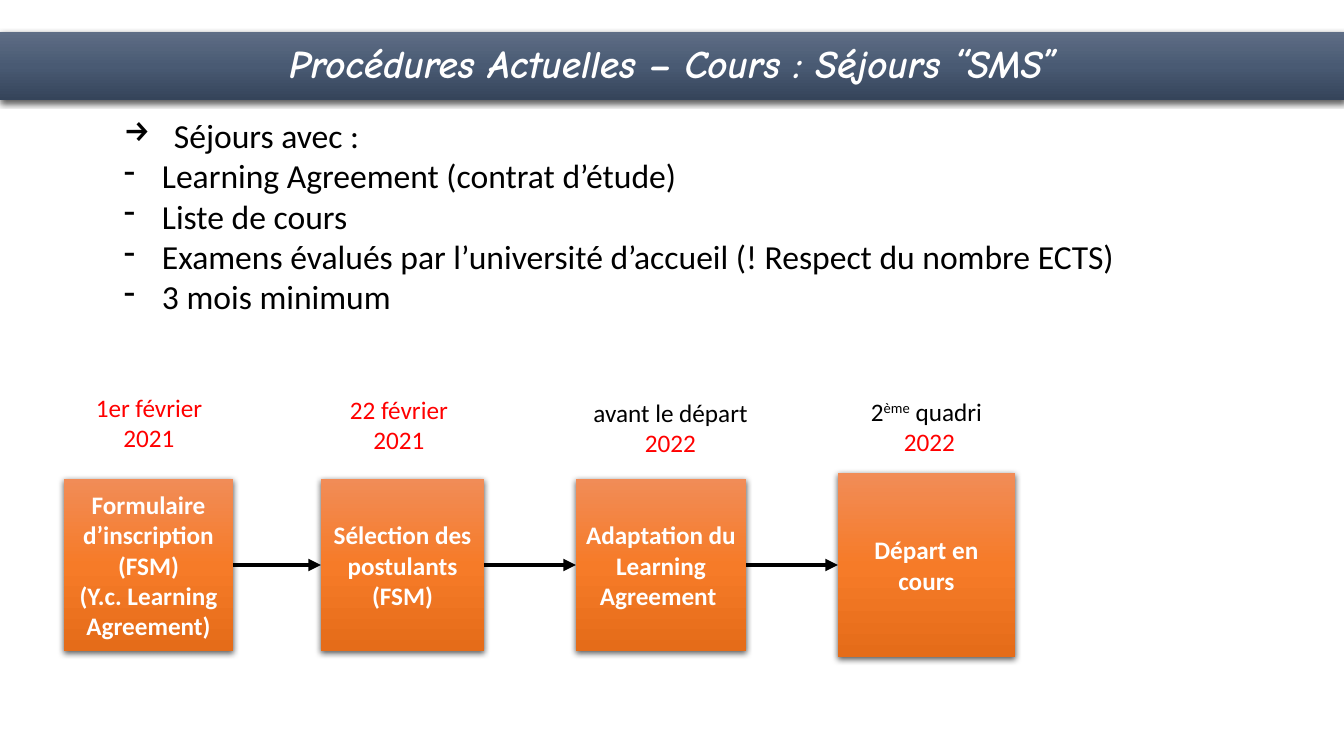
from lxml import etree
from pptx import Presentation
from pptx.dml.color import RGBColor
from pptx.enum.shapes import MSO_CONNECTOR, MSO_SHAPE
from pptx.enum.text import MSO_ANCHOR, PP_ALIGN
from pptx.oxml.ns import qn
from pptx.util import Pt

RECT = MSO_SHAPE.RECTANGLE
LINE = MSO_CONNECTOR.STRAIGHT
TOP, MIDDLE = MSO_ANCHOR.TOP, MSO_ANCHOR.MIDDLE
LEFT, CENTER = PP_ALIGN.LEFT, PP_ALIGN.CENTER
SCALE = 914400 / 100.8
COLORS = {"white": "FFFFFF", "black": "000000", "red": "FF0000"}
BLUES = ("5E6D85", "495A73", "35445A")
ORANGES = ("F18C57", "F67B28", "E56C19")


def px(n):
    return round(n * SCALE)


def node(parent, tag, **attrs):
    return etree.SubElement(parent, qn(tag), {k: str(v) for k, v in attrs.items()})


def add_run(para, text, size, color, font="Calibri", bold=False,
            italic=False, base=0):
    run = para.add_run()
    run.text = text
    run.font.size = Pt(size)
    run.font.name = font
    run.font.bold = bold
    run.font.italic = italic
    run.font.color.rgb = RGBColor.from_string(COLORS[color])
    if base:
        run.font._element.set("baseline", str(base * 1000))


def next_para(frame, index, align=CENTER):
    para = frame.add_paragraph() if index else frame.paragraphs[0]
    para.alignment = align
    return para


def add_panel(slide, place, hues, anchor):
    """Rectangle with a vertical gradient and a soft shadow below."""
    shape = slide.shapes.add_shape(RECT, *map(px, place))
    props = shape._element.spPr
    grad = node(props, "a:gradFill", rotWithShape=1)
    stops = node(grad, "a:gsLst")
    for i, hue in enumerate(hues):
        stop = node(stops, "a:gs", pos=i * 50000)
        node(stop, "a:srgbClr", val=hue)
    node(grad, "a:lin", ang=5400000, scaled=0)
    shape.line.fill.background()
    shape.shadow.inherit = False
    shade = node(props.find(qn("a:effectLst")), "a:outerShdw",
                 blurRad=Pt(4.5), dist=Pt(1.5), dir=5400000, rotWithShape=0)
    tint = node(shade, "a:srgbClr", val=COLORS["black"])
    node(tint, "a:alpha", val=63000)
    shape.text_frame.word_wrap = True
    shape.text_frame.vertical_anchor = anchor
    return shape


def add_title(slide, text):
    bar = add_panel(slide, (0, 32, 1344, 68), BLUES, TOP)
    frame = bar.text_frame
    frame.margin_left = frame.margin_right = px(24)
    frame.margin_top = frame.margin_bottom = px(12)
    para = next_para(frame, 0)
    para.line_spacing = 0.93
    add_run(para, text, 28, "white", "Comic Neue", True, True)


def add_step(slide, place, lines):
    box = add_panel(slide, place, ORANGES, MIDDLE)
    for i, line in enumerate(lines):
        add_run(next_para(box.text_frame, i), line, 18, "white", bold=True)
    return box


def add_text(slide, place, wrap=True):
    frame = slide.shapes.add_textbox(*map(px, place)).text_frame
    frame.word_wrap = wrap
    return frame


def add_date(slide, place, paras, wrap=True):
    frame = add_text(slide, place, wrap)
    for i, runs in enumerate(paras):
        para = next_para(frame, i)
        for text, color, base in runs:
            add_run(para, text, 18, color, base=base)


def add_list(slide, place, items):
    frame = add_text(slide, place)
    for i, (mark, indent, text) in enumerate(items):
        para = next_para(frame, i, LEFT)
        props = para._p.get_or_add_pPr()
        props.set("marL", str(px(indent)))
        props.set("indent", str(-px(indent)))
        node(props, "a:buChar", char=mark)
        add_run(para, text, 24, "black")


def add_arrow(slide, start, end):
    mid = start.top + start.height // 2
    line = slide.shapes.add_connector(
        LINE, start.left + start.width, mid, end.left, mid)
    line.begin_connect(start, 3)
    line.end_connect(end, 1)
    line.line.width = Pt(3)
    line.line.color.rgb = RGBColor.from_string(COLORS["black"])
    node(line.line._get_or_add_ln(), "a:tailEnd", type="triangle")
    node(line._element.spPr, "a:effectLst")


def main():
    deck = Presentation()
    deck.slide_width, deck.slide_height = px(1344), px(756)
    slide = deck.slides.add_slide(deck.slide_layouts[6])

    # Title and conditions
    add_title(slide, "Procédures Actuelles – Cours : Séjours “SMS”")
    add_list(slide, (114, 110, 1034, 268), [
        ("→", 50, "Séjours avec :"),
        ("-", 38, "Learning Agreement (contrat d’étude)"),
        ("-", 38, "Liste de cours"),
        ("-", 38, "Examens évalués par l’université d’accueil "
                  "(! Respect du nombre ECTS)"),
        ("-", 38, "3 mois minimum"),
    ])

    # Dates above the steps
    add_date(slide, (80, 387, 138, 72), [[("1er février 2021", "red", 0)]])
    add_date(slide, (330, 389, 138, 72), [[("22 février 2021", "red", 0)]])
    add_date(slide, (560, 392, 221, 72),
             [[("avant le départ ", "black", 0), ("2022", "red", 0)]])
    add_date(slide, (858, 391, 137, 72),
             [[("2", "black", 0), ("ème", "black", 30), (" quadri", "black", 0)],
              [(" ", "black", 0), ("2022", "red", 0)]], wrap=False)

    # Steps and the arrows between them
    steps = [add_step(slide, place, lines) for place, lines in [
        ((64, 479, 169, 172),
         ["Formulaire d’inscription (FSM)", "(Y.c. Learning Agreement)"]),
        ((321, 479, 163, 172), ["Sélection des postulants (FSM)"]),
        ((576, 479, 170, 172), ["Adaptation du Learning Agreement "]),
        ((838, 473, 177, 184), ["Départ en cours"]),
    ]]
    for start, end in zip(steps, steps[1:]):
        add_arrow(slide, start, end)

    deck.save("out.pptx")


if __name__ == "__main__":
    main()
